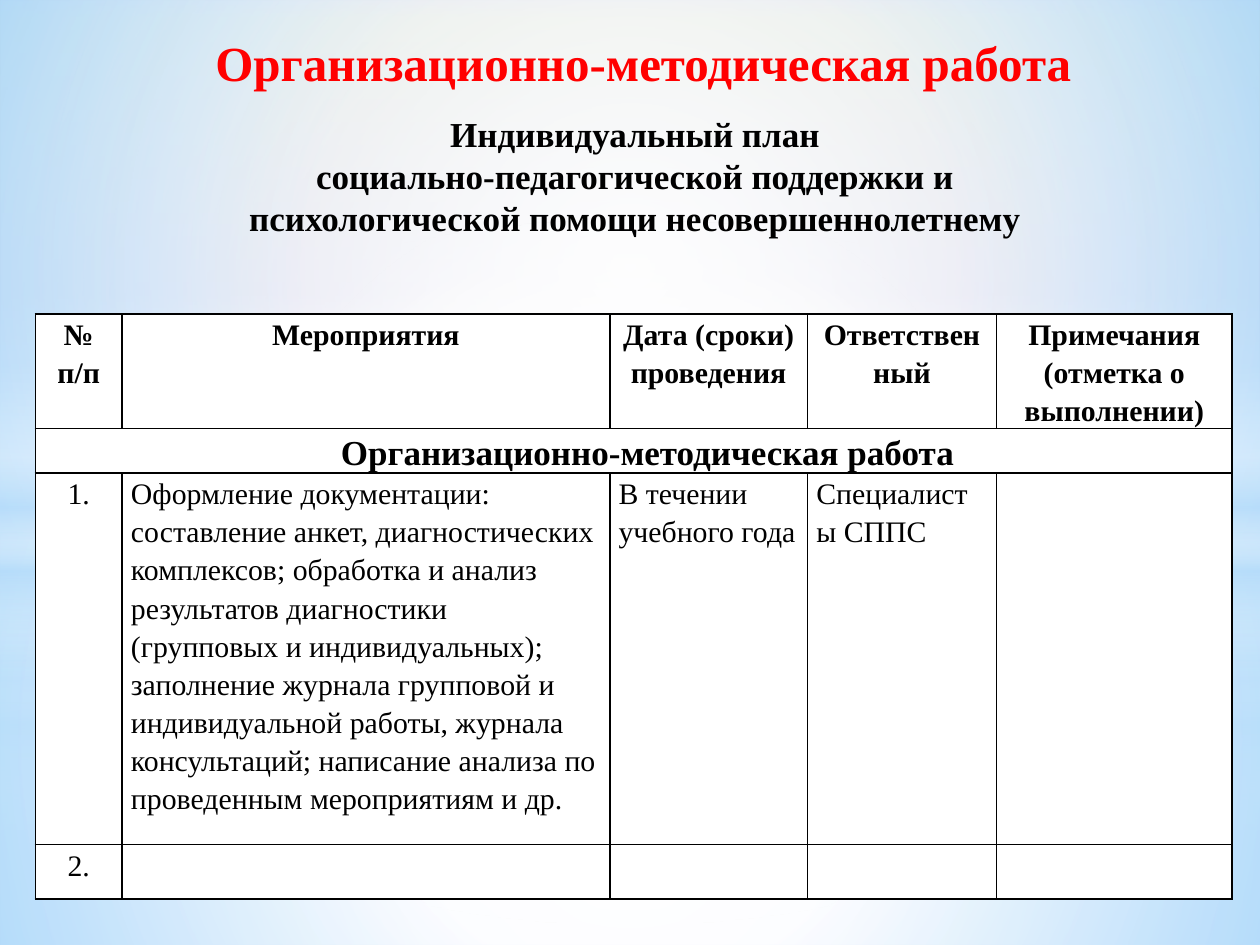
"""Builds a slide with an individual support plan table on a soft blue background."""
from lxml.etree import SubElement
from pptx import Presentation
from pptx.dml.color import RGBColor
from pptx.enum.shapes import MSO_SHAPE
from pptx.enum.text import MSO_ANCHOR, MSO_AUTO_SIZE, PP_ALIGN
from pptx.oxml import parse_xml
from pptx.oxml.ns import nsdecls, qn
from pptx.util import Inches, Pt

FONT, BLACK, RED, WHITE = "Times New Roman", "000000", "FF0000", "FFFFFF"
SKY = "B4DCFA"
TITLE = "Организационно-методическая работа"
SUBTITLE = [
    "Индивидуальный план",
    "социально-педагогической поддержки и",
    "психологической помощи несовершеннолетнему",
]
COLUMNS = [0.69, 3.87, 1.57, 1.5, 1.87]
ROWS = [0.9, 0.33, 2.95, 0.43]
HEADER = [
    ["№ п/п"],
    ["Мероприятия"],
    ["Дата (сроки) проведения"],
    ["Ответственный"],
    ["Примечания", "(отметка о выполнении)"],
]
SECTION = 1
TABLE = [
    HEADER,
    [[TITLE], [], [], [], []],
    [
        ["1."],
        ["Оформление документации: составление анкет, диагностических комплексов; "
         "обработка и анализ результатов диагностики (групповых и индивидуальных); "
         "заполнение журнала групповой и индивидуальной работы, журнала консультаций; "
         "написание анализа по проведенным мероприятиям и др."],
        ["В течении учебного года"],
        ["Специалисты СППС"],
        [],
    ],
    [["2."], [], [], [], []],
]
BACKDROP = [(0, "8D9AAC", 100), (2, "96AB94", 100), (31, "8488C4", 100),
            (45, "D4DEFF", 100), (94, "D4DEFF", 100)]
LOWER = [(0, WHITE, 91), (37, WHITE, 76), (100, SKY, 79)]
UPPER = [(0, WHITE, 89), (48, WHITE, 62), (100, SKY, 79)]
HORIZON = [(0, WHITE, 0), (29, WHITE, 30), (45, SKY, 40),
           (55, WHITE, 26), (65, SKY, 60), (100, WHITE, 0)]
SKIES = [(5.58, 4.12, 56), (4.23, 2.9, 54)]


def rgb(value):
    return RGBColor.from_string(value)


def gradient(stops, radial):
    items = "".join(
        f'<a:gs pos="{pos * 1000}"><a:srgbClr val="{color}">'
        f'<a:alpha val="{alpha * 1000}"/></a:srgbClr></a:gs>'
        for pos, color, alpha in stops)
    direction = (
        '<a:path path="circle"><a:fillToRect l="50000" t="50000" r="50000" b="50000"/></a:path>'
        if radial else '<a:lin ang="5400000" scaled="0"/>')
    return parse_xml(f'<a:gradFill {nsdecls("a")} rotWithShape="1">'
                     f'<a:gsLst>{items}</a:gsLst>{direction}</a:gradFill>')


def set_gradient(fill, element, stops, radial):
    fill.solid()
    solid = next(element.iter(qn("a:solidFill")))
    solid.getparent().replace(solid, gradient(stops, radial))


def add_layer(s, kind, top, height, stops, radial=True):
    sp = s.shapes.add_shape(kind, 0, Inches(top), Inches(10), Inches(height))
    sp.shadow.inherit = False
    sp.line.fill.background()
    set_gradient(sp.fill, sp._element.spPr, stops, radial)


def add_sky(s, split, horizon, edge):
    rect = MSO_SHAPE.RECTANGLE
    add_layer(s, rect, split, 7.5 - split, LOWER)
    add_layer(s, rect, 0, split, UPPER)
    add_layer(s, rect, horizon, 2.5, HORIZON, radial=False)
    add_layer(s, MSO_SHAPE.OVAL, 1.75, 5.58, [(0, WHITE, 100), (edge, WHITE, 0)])


def write(tf, lines, size, color=BLACK, bold=True, align=PP_ALIGN.CENTER, spacing=1.0):
    tf.word_wrap = True
    for i, line in enumerate(lines):
        p = tf.add_paragraph() if i else tf.paragraphs[0]
        p.alignment, p.line_spacing = align, spacing
        r = p.add_run()
        r.text = line
        r.font.name, r.font.size, r.font.bold = FONT, Pt(size), bold
        r.font.color.rgb = rgb(color)


def set_borders(cell):
    props = cell._tc.get_or_add_tcPr()
    for i, side in enumerate(("lnL", "lnR", "lnT", "lnB")):
        line = parse_xml(f'<a:{side} {nsdecls("a")} w="12700"/>')
        SubElement(SubElement(line, qn("a:solidFill")), qn("a:srgbClr"), val=BLACK)
        props.insert(i, line)


def add_plan(s):
    table = s.shapes.add_table(len(ROWS), len(COLUMNS), Inches(0.28), Inches(2.49),
                               Inches(sum(COLUMNS)), Inches(sum(ROWS))).table
    table.first_row = table.horz_banding = False
    for column, width in zip(table.columns, COLUMNS):
        column.width = Inches(width)
    for row, height in zip(table.rows, ROWS):
        row.height = Inches(height)
    for i, row in enumerate(TABLE):
        for j, lines in enumerate(row):
            cell = table.cell(i, j)
            cell.margin_left = cell.margin_right = Inches(0.07)
            cell.margin_top = cell.margin_bottom = 0
            cell.fill.solid()
            cell.fill.fore_color.rgb = rgb(WHITE)
            set_borders(cell)
            centred = i <= SECTION or j == 0
            write(cell.text_frame, lines, 20 if i == SECTION else 17, bold=i <= SECTION,
                  align=PP_ALIGN.CENTER if centred else PP_ALIGN.LEFT, spacing=1.15)
    section = table.cell(SECTION, 0)
    section.merge(table.cell(SECTION, len(COLUMNS) - 1))
    section.margin_left = Inches(0.29)


def main():
    prs = Presentation()
    prs.slide_width, prs.slide_height = Inches(10), Inches(7.5)
    s = prs.slides.add_slide(prs.slide_layouts[5])
    set_gradient(s.background.fill, s._element, BACKDROP, radial=False)
    for sky in SKIES:
        add_sky(s, *sky)
    add_plan(s)

    box = s.shapes.add_textbox(Inches(0.59), Inches(0.84), Inches(8.9), Inches(1.11))
    write(box.text_frame, SUBTITLE, 20)

    title = s.shapes.title
    title.left, title.top = Inches(0.3), Inches(0.21)
    title.width, title.height = Inches(9.61), Inches(0.57)
    title.text_frame.auto_size = MSO_AUTO_SIZE.NONE
    title.text_frame.vertical_anchor = MSO_ANCHOR.TOP
    write(title.text_frame, [TITLE], 28, RED)
    s.shapes._spTree.append(title._element)
    prs.save("out.pptx")


if __name__ == "__main__":
    main()
